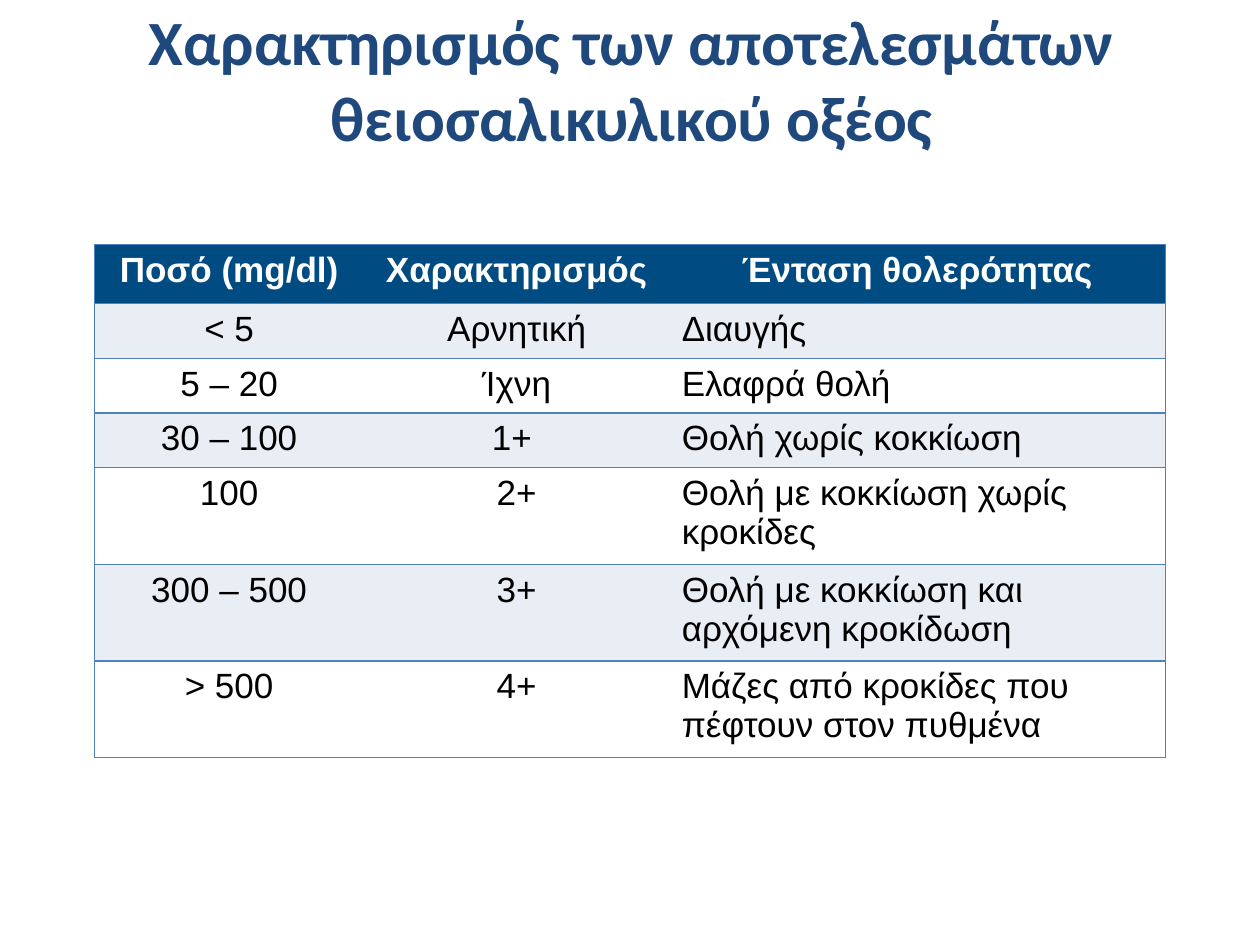
from lxml import etree
from pptx import Presentation
from pptx.dml.color import RGBColor
from pptx.enum.text import MSO_ANCHOR, PP_ALIGN
from pptx.oxml.ns import qn
from pptx.util import Cm, Pt

CENTER, LEFT = PP_ALIGN.CENTER, PP_ALIGN.LEFT
MIDDLE = MSO_ANCHOR.MIDDLE

COLORS = {
    "title": "1F497D",
    "header": "004B82",
    "band": "E9EDF4",
    "white": "FFFFFF",
    "text": "000000",
    "border": "4F81BD",
}

TITLE = "Χαρακτηρισμός των αποτελεσμάτων θειοσαλικυλικού οξέος"
ROWS = [
    ("Ποσό (mg/dl)", "Χαρακτηρισμός", "Ένταση θολερότητας"),
    ("< 5", "Αρνητική", "Διαυγής"),
    ("5 – 20", "Ίχνη", "Ελαφρά θολή"),
    ("30 – 100", "1+ ", "Θολή χωρίς κοκκίωση"),
    ("100", "2+", "Θολή με κοκκίωση χωρίς κροκίδες"),
    ("300 – 500", "3+", "Θολή με κοκκίωση και αρχόμενη κροκίδωση"),
    ("> 500", "4+", "Μάζες από κροκίδες που πέφτουν στον πυθμένα"),
]
COLUMN_WIDTHS = [5.44, 6.15, 10.0]
ROW_HEIGHTS = [1.19] + [1.04] * 3 + [1.83] * 3


class SlideBuilder:
    def __init__(self, page):
        self.page = page

    def style_text(self, para, font, size, color, bold, align):
        para.alignment = align
        for span in para.runs:
            span.font.name = font
            span.font.size = Pt(size)
            span.font.bold = bold
            span.font.color.rgb = RGBColor.from_string(COLORS[color])

    def title(self, text, left, top, width, height):
        box = self.page.shapes.add_textbox(Cm(left), Cm(top), Cm(width), Cm(height))
        frame = box.text_frame
        frame.word_wrap = True
        frame.vertical_anchor = MIDDLE
        frame.text = text
        self.style_text(frame.paragraphs[0], "Calibri", 36, "title", True, CENTER)

    def borders(self, cell, visible):
        properties = cell._tc.get_or_add_tcPr()
        for index, side in enumerate("LRTB"):
            line = etree.Element(qn(f"a:ln{side}"), w=str(Pt(1)))
            if side in visible:
                fill = etree.SubElement(line, qn("a:solidFill"))
                etree.SubElement(fill, qn("a:srgbClr"), val=COLORS["border"])
            else:
                etree.SubElement(line, qn("a:noFill"))
            properties.insert(index, line)

    def table(self, rows, left, top, widths, heights):
        frame = self.page.shapes.add_table(
            len(rows), len(widths), Cm(left), Cm(top), Cm(sum(widths)), Cm(sum(heights)))
        table = frame.table
        for column, width in zip(table.columns, widths):
            column.width = Cm(width)
        for row, height in zip(table.rows, heights):
            row.height = Cm(height)

        last = len(widths) - 1
        for r, values in enumerate(rows):
            header = r == 0
            fill = "header" if header else "band" if r % 2 else "white"
            for c, value in enumerate(values):
                cell = table.cell(r, c)
                cell.text_frame.text = value
                self.style_text(
                    cell.text_frame.paragraphs[0], "Arial", 20,
                    "white" if header else "text", header,
                    LEFT if c == last and not header else CENTER)
                cell.fill.solid()
                cell.fill.fore_color.rgb = RGBColor.from_string(COLORS[fill])
                # Only the outer edges have vertical lines
                outer = "L" if c == 0 else "R" if c == last else ""
                self.borders(cell, "TB" + outer)


def main():
    deck = Presentation()
    deck.slide_width, deck.slide_height = Cm(25.4), Cm(19.05)
    builder = SlideBuilder(deck.slides.add_slide(deck.slide_layouts[6]))

    # Heading
    builder.title(TITLE, 1.3, 0.33, 22.86, 2.51)
    # Grading of results
    builder.table(ROWS, 1.9, 4.93, COLUMN_WIDTHS, ROW_HEIGHTS)

    deck.save("out.pptx")


if __name__ == "__main__":
    main()
